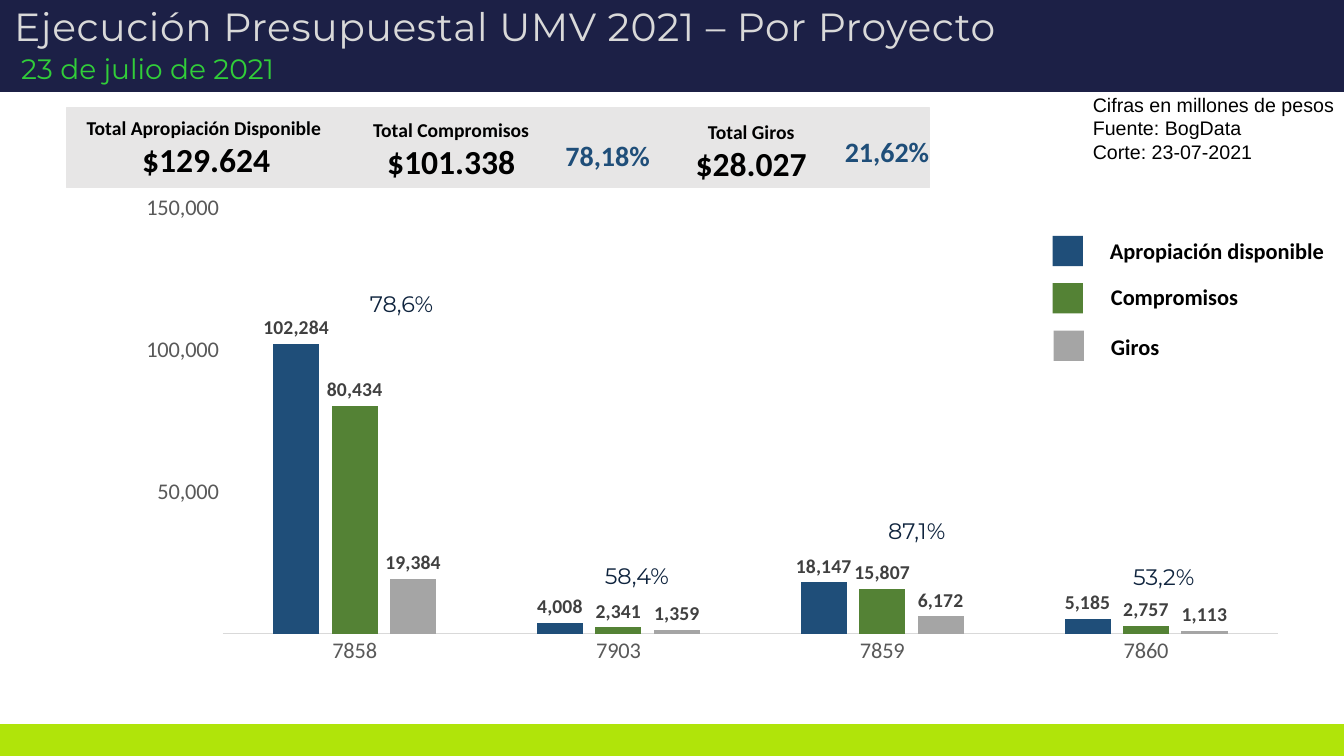
from lxml import etree
from pptx import Presentation
from pptx.chart.data import CategoryChartData
from pptx.dml.color import RGBColor
from pptx.enum import chart as ch, shapes, text
from pptx.oxml import parse_xml, ns
from pptx.util import Inches, Pt

COLORS = {
    "navy": "1C2046", "lime": "B0E40A", "green": "31CE39", "pale": "D9D9D9",
    "panel": "E7E6E6", "white": "FFFFFF", "black": "000000", "ink": "0F243E",
    "available": "1F4E79", "committed": "548235", "paid": "A5A5A5",
    "axis": "595959", "label": "404040",
}
SERIES_COLORS = ["available", "committed", "paid"]
PROJECTS = ["7858", "7903", "7859", "7860"]
MILLION = 10 ** 6
MILLIONS_FORMAT = "#,###,,"
VALUES = [
    [102284, 4008, 18147, 5185],
    [80434, 2341, 15807, 2757],
    [19384, 1359, 6172, 1113],
]


def rgb(name):
    return RGBColor.from_string(COLORS[name])


def style(font, size, color, name="Calibri", bold=False):
    font.size, font.name, font.bold = Pt(size), name, bold
    font.color.rgb = rgb(color)


def add_rect(s, x, y, w, h, fill, line=None):
    sp = s.shapes.add_shape(shapes.MSO_SHAPE.RECTANGLE, Inches(x), Inches(y), Inches(w), Inches(h))
    sp.shadow.inherit = False
    sp.fill.solid()
    sp.fill.fore_color.rgb = rgb(fill)
    if line:
        sp.line.color.rgb = rgb(line)
        sp.line.width = Pt(1)
    else:
        sp.line.fill.background()
    return sp


def add_text(s, x, y, w, h, lines, sizes, color="black", name="Calibri", bold=True, align="LEFT"):
    tf = s.shapes.add_textbox(Inches(x), Inches(y), Inches(w), Inches(h)).text_frame
    tf.word_wrap = True
    tf.text = "\n".join(lines)
    for p, size in zip(tf.paragraphs, sizes):
        p.alignment = getattr(text.PP_ALIGN, align)
        style(p.runs[0].font, size, color, name, bold)
    return tf


def add_header(s, x, y, w, h):
    right, bottom = Inches(w), Inches(h)
    band = s.shapes.build_freeform(0, 0)
    band.add_line_segments([(right, 0), (right, bottom), (0, bottom)], close=True)
    sp = band.convert_to_shape(Inches(x), Inches(y))
    sp.shadow.inherit = False
    sp.fill.solid()
    sp.fill.fore_color.rgb = rgb("navy")
    sp.line.fill.background()

    title = s.shapes.title
    s.shapes._spTree.append(title._element)
    title.left, title.top = Inches(x + 0.13), Inches(y + 0.06)
    title.width, title.height = Inches(11.54), Inches(0.79)
    tf = title.text_frame
    tf.auto_size = text.MSO_AUTO_SIZE.NONE
    tf.vertical_anchor = text.MSO_ANCHOR.MIDDLE
    tf.margin_left = tf.margin_right = tf.margin_bottom = 0
    tf.margin_top = Inches(0.01)
    tf.text = "Ejecución Presupuestal UMV 2021 – Por Proyecto\n23 de julio de 2021"
    formats = [(28, "pale", 0.01, 0.9, 0, "50"), (20, "green", 0.08, 1, 1, "0")]
    for p, (size, color, indent, spacing, before, tracking) in zip(tf.paragraphs, formats):
        p.alignment = text.PP_ALIGN.LEFT
        p.line_spacing = spacing
        p.space_before = Pt(before)
        p._p.get_or_add_pPr().set("marL", str(Inches(indent)))
        r = p.runs[0]
        style(r.font, size, color, "Montserrat")
        r._r.get_or_add_rPr().set("spc", tracking)


def add_totals(s, x, y, w, h):
    add_rect(s, x, y, w, h, "panel", "panel")
    totals = [
        (0, 0.03, 2.77, "Total Apropiación Disponible ", "$129.624"),
        (2.72, 0.05, 2.19, "Total Compromisos", "$101.338"),
        (5.93, 0.07, 1.72, "Total Giros", "$28.027"),
    ]
    for dx, dy, width, label, amount in totals:
        add_text(s, x + dx, y + dy, width, 0.74, [label, amount], [14, 24], align="CENTER")
    for dx, dy, width, share in [(4.85, 0.25, 1.17, "78,18%"), (7.62, 0.22, 1.05, "21,62%")]:
        add_text(s, x + dx, y + dy, width, 0.44, [share], [20], "available")


def add_source(s, x, y, w, h):
    lines = ["Cifras en millones de pesos", "Fuente: BogData", "Corte: 23-07-2021"]
    tf = add_text(s, x, y, w, h, lines, [14] * 3, name="Arial", bold=False)
    tf.margin_right = 0


def add_legend(s, x, y, w):
    entries = [("Apropiación disponible", 0, 0.47, -0.04),
               ("Compromisos", 0, 0.48, -0.05),
               ("Giros", 0.01, 0.48, -0.02)]
    for i, (entry, color) in enumerate(zip(entries, SERIES_COLORS)):
        label, swatch_dx, label_dx, label_dy = entry
        top = y + 0.47 * i
        add_rect(s, x + swatch_dx, top, 0.3, 0.3, color)
        add_text(s, x + label_dx, top + label_dy, w - label_dx, 0.37, [label], [16])


def add_shares(s, x, y):
    shares = [(0, 0, 1.04, "78,6%"), (2.33, 2.7, 0.96, "58,4%"),
              (5.14, 2.25, 1.02, "87,1%"), (7.57, 2.71, 1.07, "53,2%")]
    for dx, dy, width, share in shares:
        tf = add_rect(s, x + dx, y + dy, width, 0.41, "white").text_frame
        tf.vertical_anchor = text.MSO_ANCHOR.TOP
        tf.text = share
        p = tf.paragraphs[0]
        p.alignment = text.PP_ALIGN.LEFT
        style(p.runs[0].font, 16, "ink", "Montserrat")


def set_plot_layout(chart, x, y, w, h):
    area = chart._chartSpace.chart.plotArea
    for old in area.findall(ns.qn("c:layout")):
        area.remove(old)
    layout = etree.Element(ns.qn("c:layout"))
    manual = etree.SubElement(layout, ns.qn("c:manualLayout"))
    settings = [("layoutTarget", "inner"), ("xMode", "edge"), ("yMode", "edge"),
                ("x", x), ("y", y), ("w", w), ("h", h)]
    for tag, value in settings:
        etree.SubElement(manual, ns.qn("c:" + tag)).set("val", str(value))
    area.insert(0, layout)


def add_project_chart(s, x, y, w, h):
    data = CategoryChartData(number_format=MILLIONS_FORMAT)
    data.categories = PROJECTS
    for name, values in zip(["Series 1", "Series 2", "Series 3"], VALUES):
        data.add_series(name, [value * MILLION for value in values])
    chart = s.shapes.add_chart(ch.XL_CHART_TYPE.COLUMN_CLUSTERED, Inches(x), Inches(y),
                               Inches(w), Inches(h), data).chart
    chart.has_legend = chart.has_title = False
    style(chart.font, 10, "black")
    clear = f'<c:spPr {ns.nsdecls("c", "a")}><a:noFill/><a:ln><a:noFill/></a:ln></c:spPr>'
    chart._chartSpace.chart.addnext(parse_xml(clear))
    set_plot_layout(chart, 0.129, 0.068, 0.871, 0.855)

    for axis in (chart.category_axis, chart.value_axis):
        axis.major_tick_mark = axis.minor_tick_mark = ch.XL_TICK_MARK.NONE
        axis.has_major_gridlines = False
        style(axis.tick_labels.font, 16, "axis")
    chart.category_axis.format.line.color.rgb = rgb("pale")
    chart.category_axis.format.line.width = Pt(0.75)
    axis = chart.value_axis
    axis.format.line.fill.background()
    axis.minimum_scale, axis.maximum_scale = 0, 150000 * MILLION
    axis.major_unit = 50000 * MILLION
    axis.tick_labels.number_format = MILLIONS_FORMAT
    axis.tick_labels.number_format_is_linked = False

    plot = chart.plots[0]
    plot.gap_width, plot.overlap, plot.vary_by_categories = 219, -27, False
    for series, color in zip(plot.series, SERIES_COLORS):
        series.format.fill.solid()
        series.format.fill.fore_color.rgb = rgb(color)
        labels = series.data_labels
        labels.show_value = True
        labels.position = ch.XL_LABEL_POSITION.OUTSIDE_END
        labels.number_format = MILLIONS_FORMAT
        labels.number_format_is_linked = False
        style(labels.font, 14, "label", bold=True)


def main():
    prs = Presentation()
    prs.slide_width, prs.slide_height = Inches(13.33), Inches(7.5)
    s = prs.slides.add_slide(prs.slide_layouts[5])
    add_rect(s, 0, 7.19, 13.33, 0.31, "lime", "lime")
    add_shares(s, 3.57, 2.83)
    add_header(s, 0, 0, 13.33, 0.91)
    add_legend(s, 10.44, 2.34, 2.87)
    add_totals(s, 0.66, 1.07, 8.56, 0.79)
    add_source(s, 10.74, 0.87, 2.59, 0.81)
    add_project_chart(s, 0.66, 1.73, 12.02, 4.94)
    prs.save("out.pptx")


if __name__ == "__main__":
    main()
